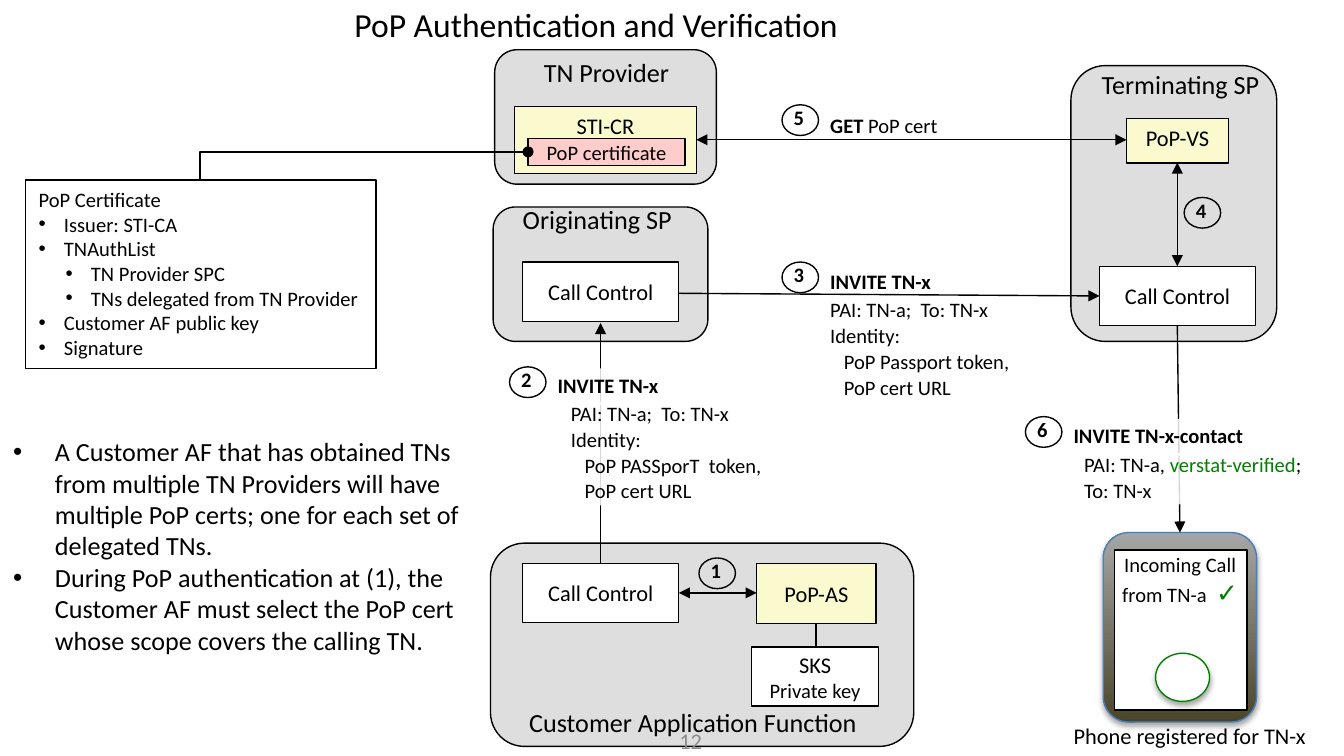
from dataclasses import dataclass

from lxml import etree
from pptx import Presentation
from pptx.dml.color import RGBColor
from pptx.enum.shapes import MSO_CONNECTOR, MSO_SHAPE
from pptx.enum.text import MSO_ANCHOR, MSO_AUTO_SIZE, PP_ALIGN
from pptx.oxml.ns import qn
from pptx.util import Cm, Pt

RECT, ROUND, OVAL = MSO_SHAPE.RECTANGLE, MSO_SHAPE.ROUNDED_RECTANGLE, MSO_SHAPE.OVAL
STRAIGHT, ELBOW = MSO_CONNECTOR.STRAIGHT, MSO_CONNECTOR.ELBOW
TOP, MIDDLE = MSO_ANCHOR.TOP, MSO_ANCHOR.MIDDLE
LEFT, CENTER, RIGHT = PP_ALIGN.LEFT, PP_ALIGN.CENTER, PP_ALIGN.RIGHT
GROW, FIXED = MSO_AUTO_SIZE.SHAPE_TO_FIT_TEXT, MSO_AUTO_SIZE.NONE

BLACK = RGBColor(0x00, 0x00, 0x00)
WHITE = RGBColor(0xFF, 0xFF, 0xFF)
PANEL = RGBColor(0xD9, 0xD9, 0xD9)
YELLOW = RGBColor(0xFF, 0xFF, 0xCC)
PINK = RGBColor(0xFF, 0xCC, 0xCC)
GREEN = RGBColor(0x00, 0x80, 0x00)
BLUE = RGBColor(0x4B, 0x7E, 0xBC)
BROWN = RGBColor(0x4A, 0x45, 0x2A)
SILVER = RGBColor(0xA6, 0xA6, 0xA6)
GRAY = RGBColor(0x8C, 0x8C, 0x8C)

LABEL = {"line_spacing": 0.9, "space_before": Pt(6)}
DETAIL = {"line_spacing": 0.9, "space_before": Pt(2)}
CENTERED = {"alignment": CENTER}
TIGHT = (0.18, 0.1)
FLAT = (0.25, 0.03)


@dataclass
class Para:
    """One paragraph; runs is a string or a list of (text, font values)."""
    runs: object
    left: float = 0
    hang: float = 0
    level: int = 0


class Diagram:
    """Slide builder; all lengths are in centimetres."""
    font = {"name": "Calibri", "size": 11, "bold": False, "color": BLACK}
    weight = Pt(0.75)

    def __init__(self, slide):
        self.s = slide

    def text(self, sp, paras, fmt=None, inset=(0.25, 0.13), anchor=TOP,
             wrap=True, grow=False, **font):
        tf = sp.text_frame
        dx, dy = map(Cm, inset)
        frame = {"margin_left": dx, "margin_right": dx, "margin_top": dy,
                 "margin_bottom": dy, "vertical_anchor": anchor,
                 "word_wrap": wrap, "auto_size": GROW if grow else FIXED}
        for key, value in frame.items():
            setattr(tf, key, value)
        for i, item in enumerate([paras] if isinstance(paras, str) else paras):
            para = item if isinstance(item, Para) else Para(item)
            p = tf.add_paragraph() if i else tf.paragraphs[0]
            for key, value in {"alignment": LEFT, "level": para.level, **(fmt or {})}.items():
                setattr(p, key, value)
            self.indent(p, para)
            runs = [(para.runs, {})] if isinstance(para.runs, str) else para.runs
            for words, extra in runs:
                r = p.add_run()
                r.text = words
                values = {**self.font, **font, **extra}
                r.font.color.rgb = values.pop("color")
                values["size"] = Pt(values["size"])
                for key, value in values.items():
                    setattr(r.font, key, value)

    def indent(self, p, para):
        if para.left:
            pPr = p._p.get_or_add_pPr()
            pPr.set("marL", str(Cm(para.left)))
            pPr.set("indent", str(-Cm(para.hang)))
            if para.hang:
                etree.SubElement(pPr, qn("a:buFont"), typeface="Arial")
                etree.SubElement(pPr, qn("a:buChar"), char="•")

    def shape(self, kind, x, y, w, h, fill=None, opacity=100, line=BLACK, parent=None):
        sp = (parent or self.s).shapes.add_shape(kind, Cm(x), Cm(y), Cm(w), Cm(h))
        sp.shadow.inherit = False
        if fill is None:
            sp.fill.background()
        else:
            sp.fill.solid()
            sp.fill.fore_color.rgb = fill
            if opacity < 100:
                clr = sp._element.spPr.find(qn("a:solidFill"))[0]
                etree.SubElement(clr, qn("a:alpha"), val=str(opacity * 1000))
        if line is None:
            sp.line.fill.background()
        else:
            sp.line.color.rgb = line
            sp.line.width = self.weight
        return sp

    def shadow(self, sp):
        effects = sp._element.spPr.find(qn("a:effectLst"))
        outer = etree.SubElement(effects, qn("a:outerShdw"), blurRad=str(Pt(3.1)),
                                 dist=str(Pt(1.8)), dir="5400000", rotWithShape="0")
        clr = etree.SubElement(outer, qn("a:srgbClr"), val=str(BLACK))
        etree.SubElement(clr, qn("a:alpha"), val="35000")

    def box(self, x, y, w, h, paras, fill=WHITE, opacity=100, anchor=MIDDLE, size=12, **kw):
        sp = self.shape(RECT, x, y, w, h, fill, opacity)
        self.text(sp, paras, CENTERED, anchor=anchor, size=size, **kw)

    def textbox(self, x, y, w, h, paras, fmt=None, parent=None, **kw):
        sp = (parent or self.s).shapes.add_textbox(Cm(x), Cm(y), Cm(w), Cm(h))
        self.text(sp, paras, fmt, **kw)

    def label(self, x, y, w, h, paras, fmt=LABEL, **kw):
        """Text on a nearly opaque white ground."""
        sp = self.shape(RECT, x, y, w, h, WHITE, 84, None)
        self.text(sp, paras, fmt, grow=True, **kw)

    def badge(self, number, x, y):
        g = self.s.shapes.add_group_shape()
        self.textbox(x - 0.03, y - 0.07, 0.84, 0.69, number, LABEL, g, grow=True, bold=True)
        self.shape(OVAL, x, y, 0.69, 0.58, parent=g)

    def connector(self, x1, y1, x2, y2, head=None, tail=None, kind=STRAIGHT):
        c = self.s.shapes.add_connector(kind, Cm(x1), Cm(y1), Cm(x2), Cm(y2))
        c.line.color.rgb = BLACK
        c.line.width = self.weight
        for tag, end in (("a:headEnd", head), ("a:tailEnd", tail)):
            if end:
                etree.SubElement(c.line._get_or_add_ln(), qn(tag), type=end)
        etree.SubElement(c._element.spPr, qn("a:effectLst"))
        return c

    def corner(self, x1, y1, x2, y2, **ends):
        """Connector that goes up first, then right: one bend, turned by 90°."""
        cx, cy, dx, dy = (x1 + x2) / 2, (y1 + y2) / 2, (x2 - x1) / 2, (y1 - y2) / 2
        c = self.connector(cx + dy, cy + dx, cx - dy, cy - dx, kind=ELBOW, **ends)
        spPr = c._element.spPr
        spPr.find(qn("a:prstGeom")).set("prst", "bentConnector2")
        spPr.find(qn("a:xfrm")).set("rot", "5400000")


def invite(token):
    return ["PAI: TN-a;  To: TN-x", "Identity:", Para(token, 0.26), Para("PoP cert URL", 0.26)]


def main():
    prs = Presentation()
    prs.slide_width, prs.slide_height = Cm(25.4), Cm(14.28)
    d = Diagram(prs.slides.add_slide(prs.slide_layouts[6]))

    for x, y, w, h in ((9.35, 0.94, 4.19, 2.54), (9.27, 10.26, 8, 3.84),
                       (9.32, 3.91, 4.06, 2.54), (20.24, 1.24, 3.89, 5.21)):
        d.shape(ROUND, x, y, w, h, PANEL, 85)
    for x, y, w, name in ((10.03, 0.94, 2.92, "TN Provider"),
                          (9.75, 13.21, 6.83, "Customer Application Function"),
                          (9.63, 3.71, 3.35, "Originating SP"),
                          (20.57, 1.17, 3.56, "Terminating SP")):
        d.textbox(x, y, w, 0.86, name, wrap=False, grow=True, size=14)

    d.box(9.73, 2.01, 3.43, 1.27, "STI-CR", YELLOW, 85, TOP, inset=TIGHT)
    d.box(9.98, 2.62, 2.97, 0.51, "PoP certificate", PINK, size=11)
    d.box(21.29, 2.24, 1.93, 0.84, "PoP-VS", YELLOW, 85, TOP, inset=TIGHT)
    d.box(14.3, 10.64, 2.26, 1.14, "PoP-AS", YELLOW, 85, inset=TIGHT)
    for x, y in ((9.88, 10.64), (9.88, 4.95), (20.78, 5.03)):
        d.box(x, y, 2.95, 1.12, "Call Control")
    d.box(14.2, 12.22, 2.41, 1.12, ["SKS", [("Private key", {"size": 11})]])

    phone = d.shape(ROUND, 20.85, 10.06, 2.9, 3.58, WHITE, line=BLUE)
    phone.fill.gradient()
    phone.fill.gradient_angle = 90
    for stop, color in zip(phone.fill.gradient_stops, (BROWN, SILVER)):
        stop.color.rgb = color
    d.shadow(phone)
    d.shape(RECT, 21.06, 10.39, 2.51, 3.02, WHITE)
    check = {"name": "Arial", "size": 14, "bold": True, "color": GREEN}
    d.textbox(20.35, 10.29, 3.91, 1.32,
              ["Incoming Call", [("from TN-a  ", {}), ("✓", check)]], CENTERED, grow=True)
    d.shadow(d.shape(OVAL, 21.84, 12.34, 1.02, 0.91, WHITE, line=GREEN))
    d.textbox(20.04, 13.51, 4.98, 0.76, "Phone registered for TN-x",
              wrap=False, grow=True, size=12)

    arrow = "triangle"
    d.connector(11.35, 6.1, 11.35, 10.64, arrow)
    d.connector(22.25, 3.07, 22.25, 5.03, arrow, arrow)
    d.connector(22.3, 10.06, 22.25, 6.15, arrow)

    d.label(15.44, 5.64, 4.24, 1.96, invite("PoP Passport token,"), DETAIL, inset=FLAT)
    d.label(10.54, 7.59, 4.32, 1.96, invite("PoP PASSporT  token,"), DETAIL, inset=FLAT)
    d.label(20.24, 8.56, 4.72, 0.97,
            [[("PAI: TN-a, ", {}), ("verstat-verified", {"color": GREEN}), (";", {})],
             "To: TN-x"], DETAIL, inset=FLAT)
    for x, y, w, runs in ((10.29, 6.96, 2.77, "INVITE TN-x"),
                          (15.44, 5, 2.77, "INVITE TN-x"),
                          (15.44, 2.06, 2.57, [("GET ", {}), ("PoP cert", {"bold": False})]),
                          (20.04, 7.92, 3.76, "INVITE TN-x-contact")):
        d.label(x, y, w, 0.69, [runs], wrap=False, bold=True)

    d.connector(20.78, 5.59, 12.83, 5.54, arrow)
    d.connector(14.3, 11.2, 12.83, 11.2, arrow, arrow)
    d.connector(21.29, 2.64, 13.16, 2.64, arrow, arrow)
    d.connector(15.42, 11.76, 15.42, 12.22)
    for number, x, y in (("1", 13.21, 10.54), ("2", 9.63, 6.93), ("3", 14.78, 4.95),
                         ("4", 22.38, 3.73), ("5", 14.78, 1.98), ("6", 19.38, 7.87)):
        d.badge(number, x, y)

    fields = (("Issuer: STI-CA", 0), ("TNAuthList", 0), ("TN Provider SPC", 1),
              ("TNs delegated from TN Provider", 1), ("Customer AF public key", 0),
              ("Signature", 0))
    certificate = d.shape(RECT, 0.48, 3.4, 6.63, 3.56)
    d.text(certificate, ["PoP Certificate"] + [Para(t, 0.48 + 0.51 * n, 0.48, n) for t, n in fields],
           wrap=False, grow=True)
    d.corner(3.78, 3.4, 9.98, 2.87, tail="oval")

    d.textbox(6.45, -0.05, 9.8, 1.02, "PoP Authentication and Verification",
              wrap=False, grow=True, size=18)
    d.textbox(12.5, 13.72, 1.02, 0.53, "12", {"alignment": RIGHT}, anchor=MIDDLE,
              size=12, color=GRAY)
    notes = ("A Customer AF that has obtained TNs from multiple TN Providers will have "
             "multiple PoP certs; one for each set of delegated TNs.",
             "During PoP authentication at (1), the Customer AF must select the PoP cert "
             "whose scope covers the calling TN.")
    d.textbox(0, 8.1, 9.27, 4.45, [Para(t, 0.79, 0.79) for t in notes], grow=True, size=14)

    prs.save("out.pptx")


if __name__ == "__main__":
    main()
